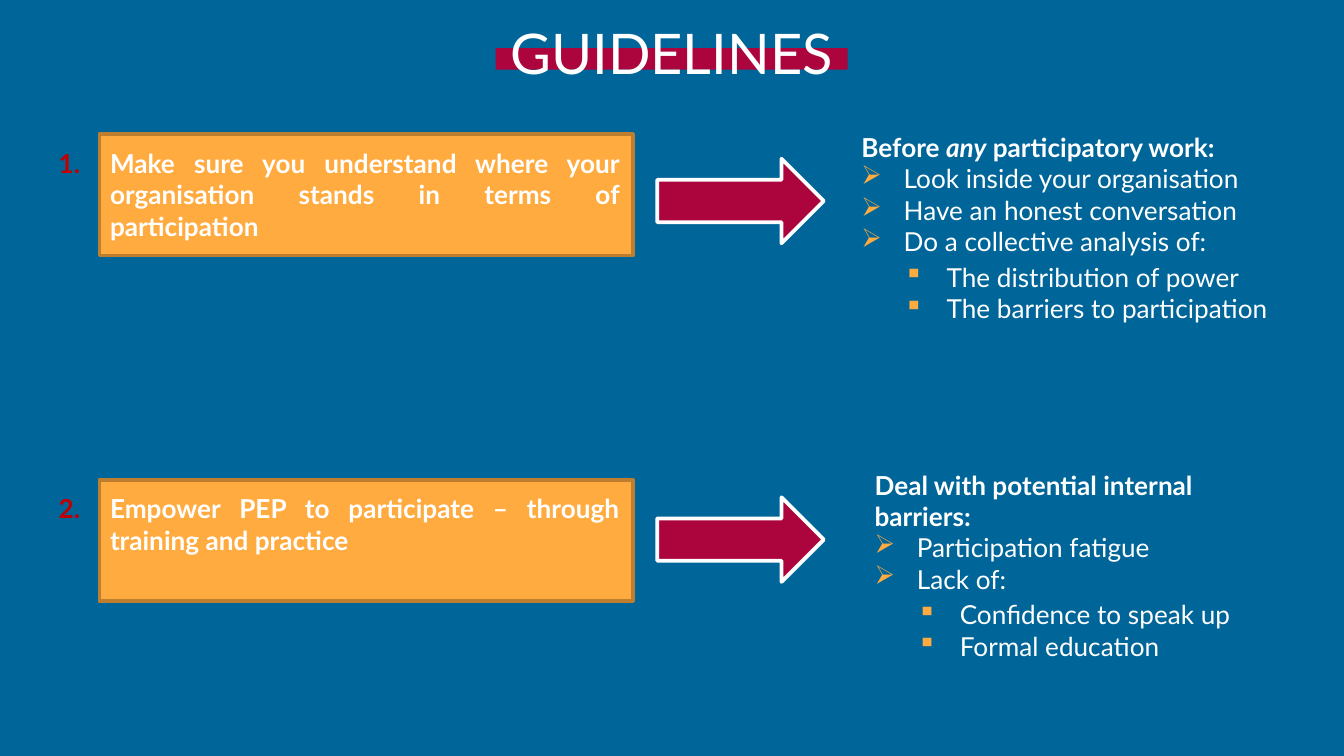
"""Build the Guidelines slide: two numbered rules, each pointing to its advice."""
import lxml.etree
import pptx
import pptx.dml.color
import pptx.enum.shapes
import pptx.enum.text
import pptx.oxml.ns
import pptx.util

Cm, Pt = pptx.util.Cm, pptx.util.Pt
SHAPE = pptx.enum.shapes.MSO_SHAPE
ALIGN = pptx.enum.text.PP_ALIGN

TITLE = "GUIDELINES"
GUIDELINES = [
    {
        "rule": "Make sure you understand where your organisation stands in terms of participation",
        "heading": [("Before ", False), ("any", True), (" participatory work:", False)],
        "advice": [
            "Look inside your organisation",
            "Have an honest conversation",
            "Do a collective analysis of:",
        ],
        "details": ["The distribution of power", "The barriers to participation"],
        "box_top": 2.54, "arrow_top": 3.0, "advice_at": (16.03, 2.36),
    },
    {
        "rule": "Empower PEP to participate – through training and practice",
        "heading": [("Deal with potential internal barriers:", False)],
        "advice": ["Participation fatigue", "Lack of:"],
        "details": ["Confidence to speak up", "Formal education"],
        "box_top": 9.07, "arrow_top": 9.4, "advice_at": (16.28, 8.74),
    },
]
THEME = {
    "font": "Lato", "title": 30, "body": 14, "line": 2,
    "background": "006699", "text": "FFFFFF", "accent": "AC043C",
    "box": "FFAB40", "border": "BD7F2F", "number": "C00000",
}
BOX_LEFT, BOX_W, BOX_H = 1.88, 10.08, 2.29
RULE_LEFT, RULE_DROP, NUMBER_INDENT = 0.86, 0.12, 0.97
ARROW_LEFT, ARROW_W, ARROW_H = 12.42, 3.15, 1.6
ADVICE_W, ADVICE_H, DETAILS_H = 8.28, 2.64, 1.45
DETAILS_DX, DETAILS_DY, BULLET_INDENT = 0.81, 2.45, 0.8


def color(name):
    return pptx.dml.color.RGBColor.from_string(THEME[name])


def add_shape(s, kind, at, fill, line=None):
    sp = s.shapes.add_shape(kind, *map(Cm, at))
    sp.shadow.inherit = False
    sp.fill.solid()
    sp.fill.fore_color.rgb = color(fill)
    if line:
        sp.line.color.rgb = color(line)
        sp.line.width = Pt(THEME["line"])
    else:
        sp.line.fill.background()


def add_text(s, at):
    tf = s.shapes.add_textbox(*map(Cm, at)).text_frame
    tf.word_wrap = True
    return tf


def add_paragraph(tf, runs, size="body", bold=False, align=ALIGN.LEFT):
    p = tf.paragraphs[0]
    if p.runs:
        p = tf.add_paragraph()
    for text, italic in runs:
        r = p.add_run()
        r.text = text
        if italic:
            r.font.italic = True
    p.alignment = align
    p.font.name = THEME["font"]
    p.font.size = Pt(THEME[size])
    p.font.bold = bold
    p.font.color.rgb = color("text")
    return p


def add_bullet(p, tint, indent, tag, **attributes):
    qn = pptx.oxml.ns.qn
    ppr = p._p.get_or_add_pPr()
    ppr.set("marL", str(Cm(indent)))
    ppr.set("indent", str(-Cm(indent)))
    clr = lxml.etree.Element(qn("a:buClr"))
    lxml.etree.SubElement(clr, qn("a:srgbClr"), val=THEME[tint])
    bullet = lxml.etree.Element(qn(tag), **attributes)
    ppr.insert(0, clr)
    ppr.insert(1, bullet)


def add_list(tf, items, char):
    for item in items:
        p = add_paragraph(tf, [(item, False)])
        add_bullet(p, "box", BULLET_INDENT, "a:buChar", char=char)


def add_title(s):
    add_shape(s, SHAPE.RECTANGLE, (9.37, 0.91, 6.65, 0.41), "accent")
    tf = add_text(s, (0.86, 0.1, 23.67, 1.6))
    tf.margin_top = tf.margin_bottom = Cm(0.25)
    add_paragraph(tf, [(TITLE, False)], "title", align=ALIGN.CENTER)


def add_guideline(s, number, g):
    top = g["box_top"]
    add_shape(s, SHAPE.RECTANGLE, (BOX_LEFT, top, BOX_W, BOX_H), "box", "border")
    rule_w = BOX_LEFT + BOX_W - RULE_LEFT
    tf = add_text(s, (RULE_LEFT, top + RULE_DROP, rule_w, BOX_H - RULE_DROP))
    p = add_paragraph(tf, [(g["rule"], False)], bold=True, align=ALIGN.JUSTIFY)
    add_bullet(p, "number", NUMBER_INDENT, "a:buAutoNum",
               type="arabicPeriod", startAt=str(number))

    arrow = (ARROW_LEFT, g["arrow_top"], ARROW_W, ARROW_H)
    add_shape(s, SHAPE.RIGHT_ARROW, arrow, "accent", "text")

    x, y = g["advice_at"]
    tf = add_text(s, (x, y, ADVICE_W, ADVICE_H))
    add_paragraph(tf, g["heading"], bold=True)
    add_list(tf, g["advice"], "➢")
    tf = add_text(s, (x + DETAILS_DX, y + DETAILS_DY, ADVICE_W, DETAILS_H))
    add_list(tf, g["details"], "▪")


def main():
    prs = pptx.Presentation()
    prs.slide_width, prs.slide_height = Cm(25.4), Cm(14.29)
    s = prs.slides.add_slide(prs.slide_layouts[6])
    s.background.fill.solid()
    s.background.fill.fore_color.rgb = color("background")
    add_title(s)
    for number, g in enumerate(GUIDELINES, 1):
        add_guideline(s, number, g)
    prs.save("out.pptx")


if __name__ == "__main__":
    main()
